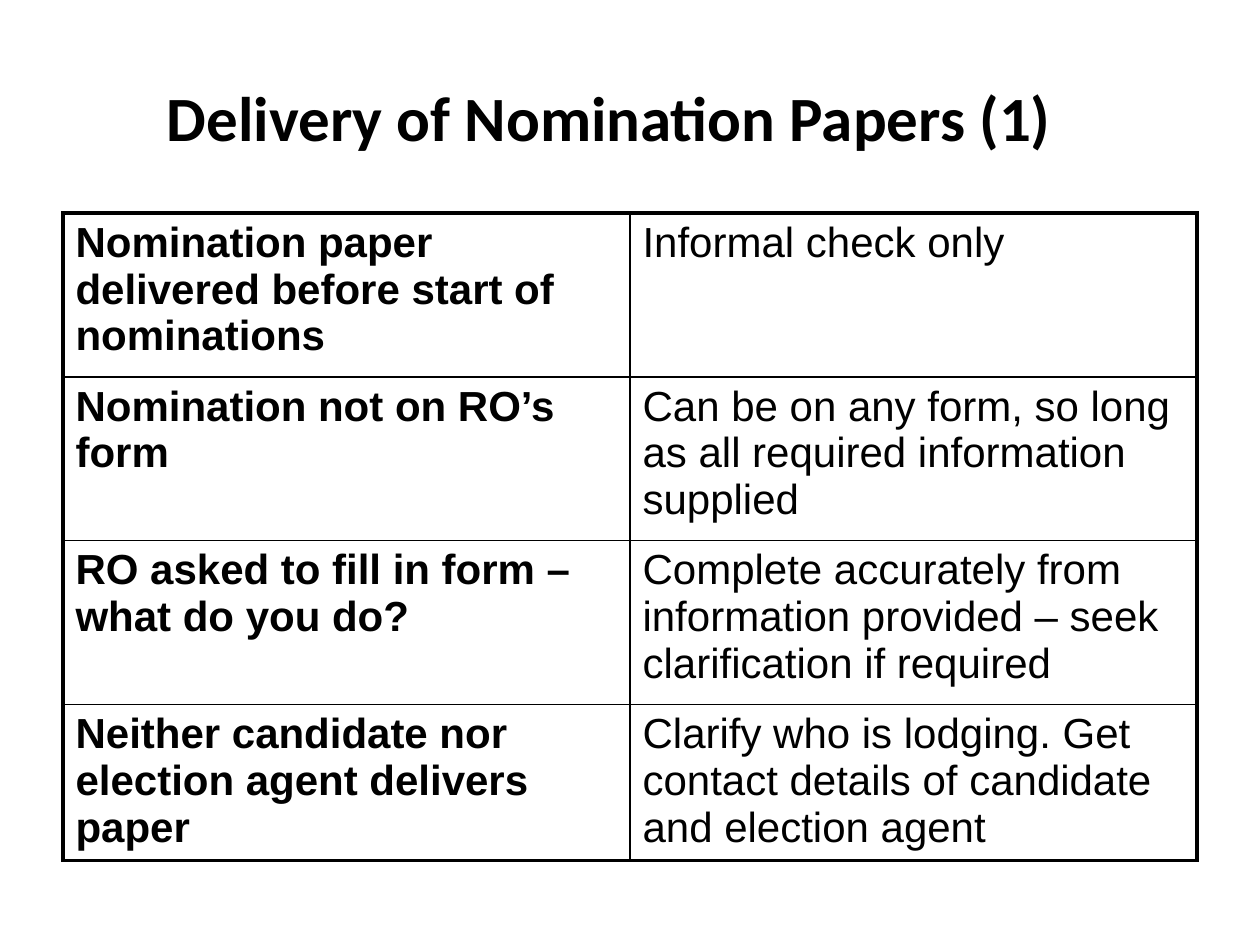
from pptx import Presentation
from pptx.dml.color import RGBColor
from pptx.enum.text import MSO_ANCHOR, PP_ALIGN
from pptx.oxml.ns import qn
from pptx.util import Inches, Pt
from lxml.etree import SubElement

COLORS = {"ink": "000000", "paper": "FFFFFF"}
SLIDE_WIDTH, SLIDE_HEIGHT = 10, 7.5
MARGIN = 0.05 * SLIDE_WIDTH
TABLE_TOP = 1.69
ROW_HEIGHTS = [1.3, 1.3, 1.3, 1.24]
OUTER_LINE, INNER_LINE = 2.25, 1

TITLE = "Delivery of Nomination Papers (1)"
SITUATIONS = [
    ("Nomination paper delivered before start of nominations",
     "Informal check only"),
    ("Nomination not on RO’s form",
     "Can be on any form, so long as all required information supplied"),
    ("RO asked to fill in form – what do you do?",
     "Complete accurately from information provided – seek clarification if required"),
    ("Neither candidate nor election agent delivers paper",
     "Clarify who is lodging. Get contact details of candidate and election agent"),
]


def write_text(frame, text, *, font, size, bold=False, align=PP_ALIGN.LEFT):
    frame.word_wrap = True
    para = frame.paragraphs[0]
    para.alignment = align
    span = para.add_run()
    span.text = text
    span.font.name = font
    span.font.size = Pt(size)
    span.font.bold = bold
    span.font.color.rgb = RGBColor.from_string(COLORS["ink"])


def set_borders(cell, widths):
    """Draw the cell's edges; widths maps L, R, T and B to points."""
    properties = cell._tc.get_or_add_tcPr()
    for position, side in enumerate("LRTB"):
        line = SubElement(properties, qn(f"a:ln{side}"), w=str(Pt(widths[side])))
        fill = SubElement(line, qn("a:solidFill"))
        SubElement(fill, qn("a:srgbClr"), val=COLORS["ink"])
        properties.insert(position, line)


def add_title(page):
    title = page.shapes.title
    title.left, title.top = Inches(MARGIN), Inches(0.04 * SLIDE_HEIGHT)
    title.width, title.height = Inches(8.67), Inches(1.25)
    title.text_frame.vertical_anchor = MSO_ANCHOR.MIDDLE
    write_text(title.text_frame, TITLE, font="Calibri", size=36, bold=True,
               align=PP_ALIGN.CENTER)


def add_situations_table(page):
    row_count, column_count = len(SITUATIONS), len(SITUATIONS[0])
    width = SLIDE_WIDTH - 2 * MARGIN
    table = page.shapes.add_table(
        row_count, column_count, Inches(MARGIN), Inches(TABLE_TOP),
        Inches(width), Inches(sum(ROW_HEIGHTS))).table
    table.first_row = table.horz_banding = False
    for column in table.columns:
        column.width = Inches(width / column_count)

    for r, (texts, height) in enumerate(zip(SITUATIONS, ROW_HEIGHTS)):
        table.rows[r].height = Inches(height)
        for c, text in enumerate(texts):
            cell = table.cell(r, c)
            cell.fill.solid()
            cell.fill.fore_color.rgb = RGBColor.from_string(COLORS["paper"])
            write_text(cell.text_frame, text, font="Arial", size=24, bold=c == 0)
            # The outer frame is heavier than the inner rules
            on_edge = {"L": c == 0, "R": c == column_count - 1,
                       "T": r == 0, "B": r == row_count - 1}
            set_borders(cell, {side: OUTER_LINE if edge else INNER_LINE
                               for side, edge in on_edge.items()})


def main():
    deck = Presentation()
    deck.slide_width, deck.slide_height = Inches(SLIDE_WIDTH), Inches(SLIDE_HEIGHT)
    page = deck.slides.add_slide(deck.slide_layouts[5])
    add_title(page)
    add_situations_table(page)
    deck.save("out.pptx")


if __name__ == "__main__":
    main()
